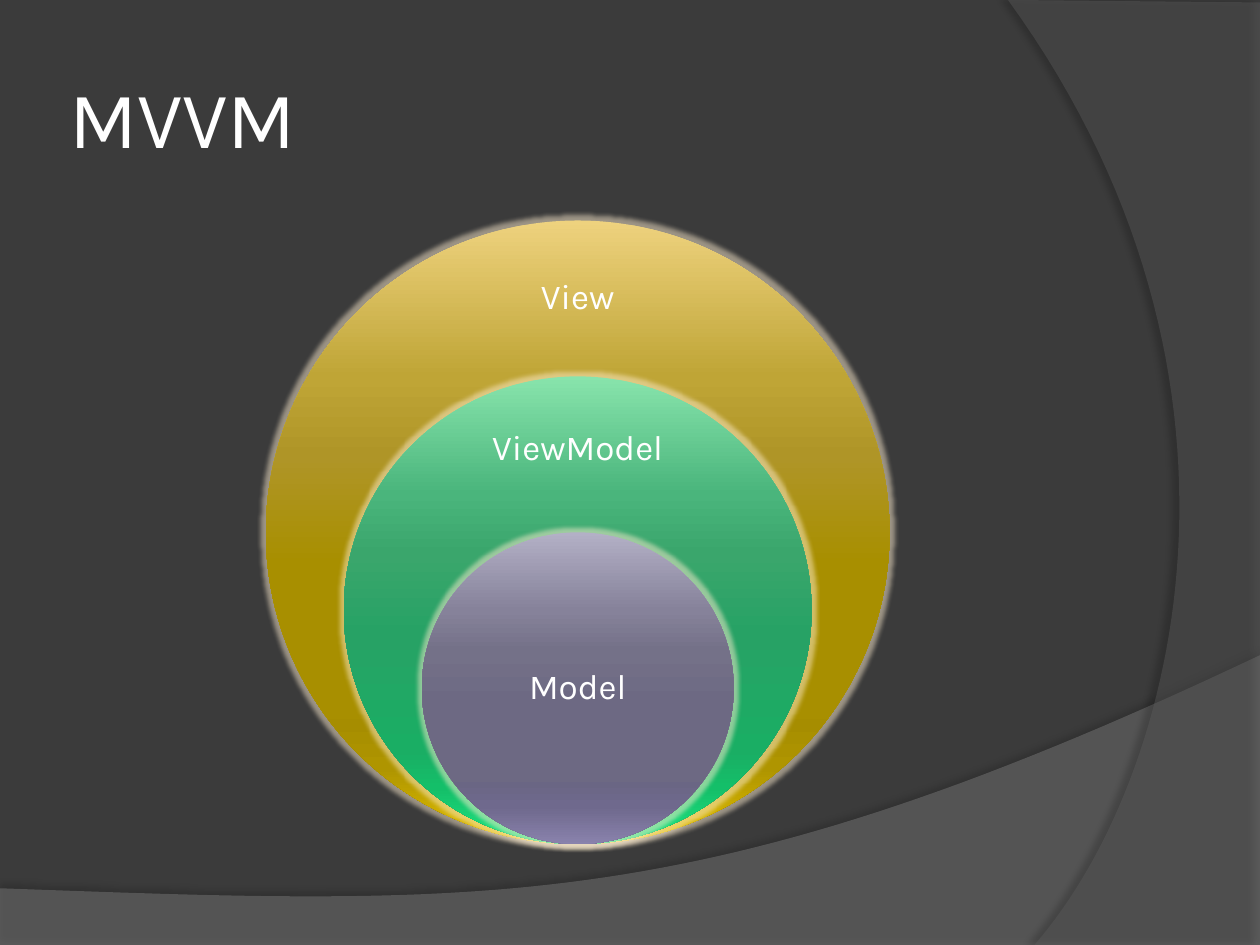
from lxml import etree
from pptx import Presentation
from pptx.dml.color import RGBColor as RGB
from pptx.enum.shapes import MSO_SHAPE as SHAPE
from pptx.enum.text import MSO_ANCHOR as ANCHOR, PP_ALIGN as ALIGN
from pptx.oxml import parse_xml
from pptx.oxml.ns import nsdecls, qn
from pptx.util import Inches, Pt

FONT = "Karla"
WHITE = RGB(0xFF, 0xFF, 0xFF)
DARK = RGB(0x3B, 0x3B, 0x3B)
WAVE = RGB(0x7F, 0x7F, 0x7F)
ARC = RGB(0x5E, 0x5E, 0x5E)
GLOW = RGB(0xFF, 0xEE, 0xD0)

# Gradient stops, in percent, shared by all rings
STOPS = (0, 25, 38, 55, 80, 88, 100)
GOLD = "EED27E BFA536 AF9527 A88F00 A68D00 AF9500 E6C100"
GREEN = "88E4AC 4AB57C 3AA66C 27A265 1AAE64 14BF69 1FE681"
PURPLE = "B3B0C6 86829A 747188 6D6983 6A6684 6F698D 8982AC"

# Name, colours, share of full width, label top and height as share of ring
RINGS = [
    ("View", GOLD, 1, 0.05, 0.15),
    ("ViewModel", GREEN, 0.75, 0.06, 0.19),
    ("Model", PURPLE, 0.5, 0.25, 0.5),
]


def tint(color, alpha):
    return f'<a:srgbClr val="{color}"><a:alpha val="{alpha * 1000}"/></a:srgbClr>'


def effect(shape, body):
    """Replace the effects of a shape."""
    shape.shadow.inherit = False
    old = shape._element.spPr.find(qn("a:effectLst"))
    old.append(parse_xml(body))


def curve(start, one, two, end, steps=60):
    """Points along a cubic Bezier curve."""
    for i in range(1, steps + 1):
        t = i / steps
        u = 1 - t
        mix = (u**3, 3 * u * u * t, 3 * u * t * t, t**3)
        yield tuple(sum(m * p[k] for m, p in zip(mix, (start, one, two, end)))
                    for k in (0, 1))


def veil(slide, points, color, alpha, shade, blur, dist, angle):
    """Draw a translucent outline with a soft shadow."""
    spots = [(Inches(x), Inches(y)) for x, y in points]
    form = slide.shapes.build_freeform(*spots[0])
    form.add_line_segments(spots[1:], close=True)
    shape = form.convert_to_shape()
    shape.fill.solid()
    shape.fill.fore_color.rgb = color
    node = shape._element.spPr.find(qn("a:solidFill"))[0]
    etree.SubElement(node, qn("a:alpha")).set("val", str(alpha * 1000))
    shape.line.fill.background()
    effect(shape, f'<a:outerShdw {nsdecls("a")} blurRad="{Pt(blur)}" '
           f'dist="{Pt(dist)}" dir="{angle * 60000}" algn="ctr" '
           f'rotWithShape="0">{tint("000000", shade)}</a:outerShdw>')


def backdrop(slide, wide, high):
    fill = slide.background.fill
    fill.solid()
    fill.fore_color.rgb = DARK
    # Wave along the bottom
    base = high + 0.01
    wave = [(0, base), (wide, base), (wide, 5.2)]
    wave += curve((wide, 5.2), (5.59, 7.29), (3.91, 7.19), (0, 7.05))
    veil(slide, wave, WAVE, 45, 35, 4, 3.5, 270)
    # Arc on the right
    arc = [(wide, 0.02), (wide, high), (8.21, high)]
    arc += curve((8.21, high), (9.35, 6.19), (10.18, 3), (8, 0))
    veil(slide, arc, ARC, 40, 45, 4, 4, 180)


def write(shape, text, size, align, inset):
    frame = shape.text_frame
    frame.word_wrap = True
    frame.vertical_anchor = ANCHOR.MIDDLE
    frame.margin_left = frame.margin_right = Inches(inset)
    frame.margin_top = frame.margin_bottom = Inches(inset)
    frame.text = text
    para = frame.paragraphs[0]
    para.alignment = align
    para.font.name = FONT
    para.font.size = Pt(size)
    para.font.color.rgb = WHITE
    return para


def heading(slide, text, left, top, wide, high):
    title = slide.shapes.title
    title.left, title.top = Inches(left), Inches(top)
    title.width, title.height = Inches(wide), Inches(high)
    write(title, text, 46, ALIGN.LEFT, 0.05)
    # Bring in front of the backdrop
    slide.shapes._spTree.append(title._element)


def ring(slide, colors, left, top, size):
    shape = slide.shapes.add_shape(SHAPE.OVAL, Inches(left), Inches(top),
                                   Inches(size), Inches(size))
    shape.line.fill.background()
    shape.fill.gradient()
    shape.fill.gradient_angle = 270
    stops = shape._element.spPr.find(qn("a:gradFill")).find(qn("a:gsLst"))
    for old in list(stops):
        stops.remove(old)
    for pos, color in zip(STOPS, colors.split()):
        stop = etree.SubElement(stops, qn("a:gs"), pos=str(pos * 1000))
        etree.SubElement(stop, qn("a:srgbClr"), val=color)
    effect(shape, f'<a:glow {nsdecls("a")} rad="{Pt(5)}">{tint(GLOW, 50)}</a:glow>')


def stack(slide, left, top, size):
    """Nest the rings so that they touch at the bottom."""
    mid, base, wide = left + size / 2, top + size, 0.35 * size
    for name, colors, share, drop, tall in RINGS:
        span = size * share
        head = base - span
        ring(slide, colors, mid - span / 2, head, span)
        label = slide.shapes.add_textbox(
            Inches(mid - wide / 2), Inches(head + drop * span),
            Inches(wide), Inches(tall * span))
        para = write(label, name, 20, ALIGN.CENTER, 0.16)
        para.line_spacing = 0.9
        # Keep long names on one line
        label.text_frame.word_wrap = False


def main():
    deck = Presentation()
    deck.slide_width, deck.slide_height = Inches(10), Inches(7.5)
    slide = deck.slides.add_slide(deck.slide_layouts[5])
    backdrop(slide, 10, 7.5)
    heading(slide, "MVVM", 0.5, 0.3, 8.17, 1.25)
    stack(slide, 2.11, 1.75, 4.95)
    deck.save("out.pptx")


if __name__ == "__main__":
    main()
